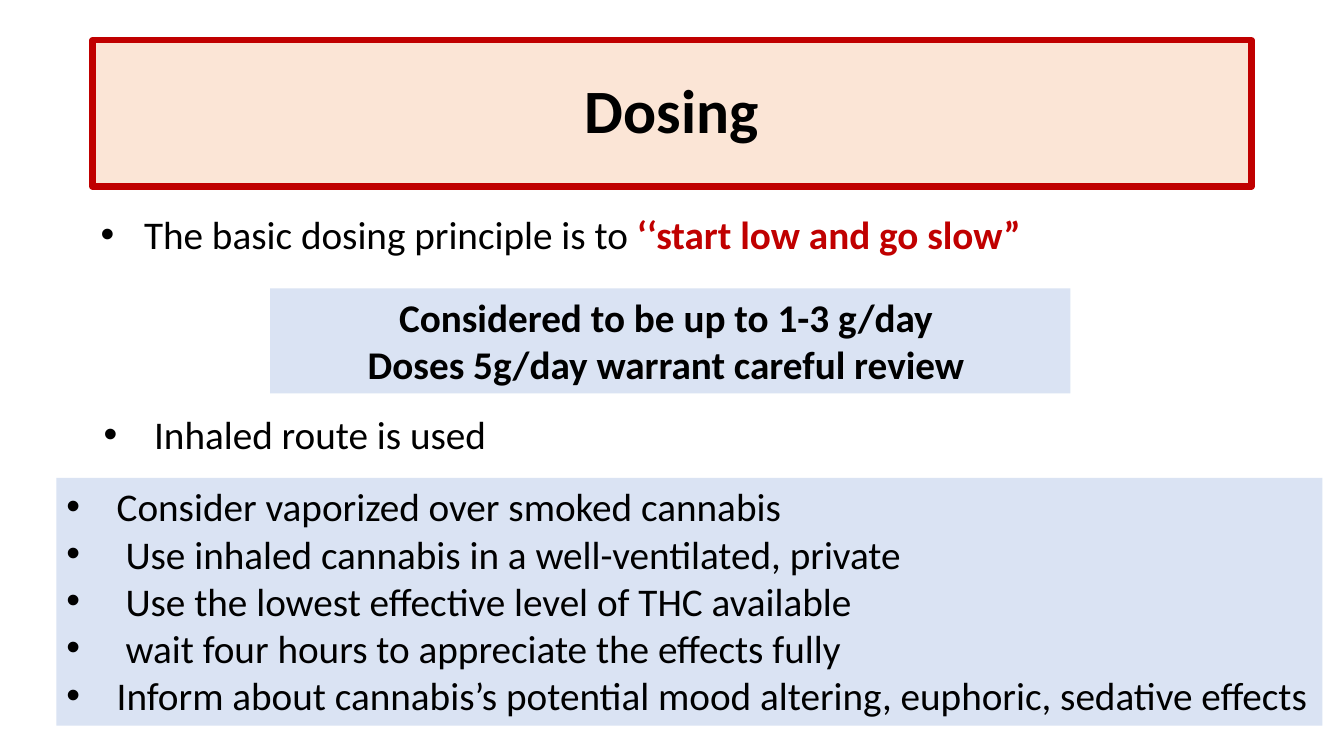
import pptx
import pptx.dml.color
import pptx.enum.shapes
import pptx.enum.text
import pptx.util
from lxml import etree
from pptx.oxml.ns import qn

Pt = pptx.util.Pt
RGBColor = pptx.dml.color.RGBColor
Align = pptx.enum.text.PP_ALIGN
Anchor = pptx.enum.text.MSO_ANCHOR

BLACK = RGBColor(0x00, 0x00, 0x00)
RED = RGBColor(0xC0, 0x00, 0x00)
PEACH = RGBColor(0xFB, 0xE5, 0xD6)
PALE_BLUE = RGBColor(0xDA, 0xE3, 0xF3)


def add_run(paragraph, text, size=28, bold=False, color=BLACK, font="Calibri"):
    run = paragraph.add_run()
    run.text = text
    run.font.name = font
    run.font.size = Pt(size)
    run.font.bold = bold
    run.font.color.rgb = color


def set_bullet(paragraph, indent, hanging):
    properties = paragraph._p.get_or_add_pPr()
    properties.set("marL", str(Pt(indent)))
    properties.set("indent", str(-Pt(hanging)))
    etree.SubElement(properties, qn("a:buFont")).set("typeface", "Arial")
    etree.SubElement(properties, qn("a:buChar")).set("char", "•")


class DosingSlide:
    """Holds the slide and draws its elements; lengths are in points."""

    def __init__(self, deck):
        self.slide = deck.slides.add_slide(deck.slide_layouts[5])

    def title(self, text, left, top, width, height):
        heading = self.slide.shapes.title
        heading.left, heading.top = Pt(left), Pt(top)
        heading.width, heading.height = Pt(width), Pt(height)
        heading.fill.solid()
        heading.fill.fore_color.rgb = PEACH
        heading.line.color.rgb = RED
        heading.line.width = Pt(4.5)
        frame = heading.text_frame
        frame.auto_size = pptx.enum.text.MSO_AUTO_SIZE.NONE
        frame.vertical_anchor = Anchor.MIDDLE
        paragraph = frame.paragraphs[0]
        paragraph.alignment = Align.CENTER
        paragraph.line_spacing = 0.9
        add_run(paragraph, text, size=44, bold=True)

    def text(self, left, top, width, height):
        frame = self.slide.shapes.add_textbox(
            Pt(left), Pt(top), Pt(width), Pt(height)).text_frame
        frame.word_wrap = True
        return frame

    def panel(self, left, top, width, height, wrap=True):
        box = self.slide.shapes.add_shape(
            pptx.enum.shapes.MSO_SHAPE.RECTANGLE,
            Pt(left), Pt(top), Pt(width), Pt(height))
        box.shadow.inherit = False
        box.fill.solid()
        box.fill.fore_color.rgb = PALE_BLUE
        box.line.fill.background()
        box.text_frame.word_wrap = wrap
        box.text_frame.vertical_anchor = Anchor.TOP
        return box.text_frame

    def lines(self, frame, entries, align=Align.LEFT, bold=False):
        """Each entry is its text and its bullet indent, or None for no bullet."""
        for index, (text, indent) in enumerate(entries):
            paragraph = frame.paragraphs[0] if index == 0 else frame.add_paragraph()
            paragraph.alignment = align
            if indent:
                set_bullet(paragraph, indent, indent)
            add_run(paragraph, text, bold=bold)


def main():
    deck = pptx.Presentation()
    deck.slide_width, deck.slide_height = Pt(960), Pt(540)
    dosing = DosingSlide(deck)

    # Title
    dosing.title("Dosing", 66, 28.8, 828, 104.4)

    # Basic principle
    principle = dosing.text(64.8, 150.5, 828, 41).paragraphs[0]
    set_bullet(principle, 31, 31)
    principle.line_spacing = 0.9
    add_run(principle, "The basic dosing principle is to ")
    add_run(principle, "‘‘start low and go slow”", bold=True, color=RED)

    # Daily amounts
    amounts = dosing.panel(193, 206, 571.7, 75)
    amounts.margin_right = Pt(13.5)
    dosing.lines(amounts, [("Considered to be up to 1-3 g/day", None),
                           ("Doses 5g/day warrant careful review", None)],
                 align=Align.CENTER, bold=True)

    # Inhalation advice
    advice = dosing.panel(40.3, 341.3, 904.3, 177, wrap=False)
    dosing.lines(advice, [
        ("Consider vaporized over smoked cannabis", 36),
        ("Use inhaled cannabis in a well-ventilated, private", 42.3),
        ("Use the lowest effective level of THC available", 42.3),
        ("wait four hours to appreciate the effects fully", 42.3),
        ("Inform about cannabis’s potential mood altering, euphoric, sedative effects", 36),
    ])

    # Route
    route = dosing.text(67, 289.5, 440.6, 41)
    dosing.lines(route, [("Inhaled route is used", 36)])

    deck.save("out.pptx")


if __name__ == "__main__":
    main()
